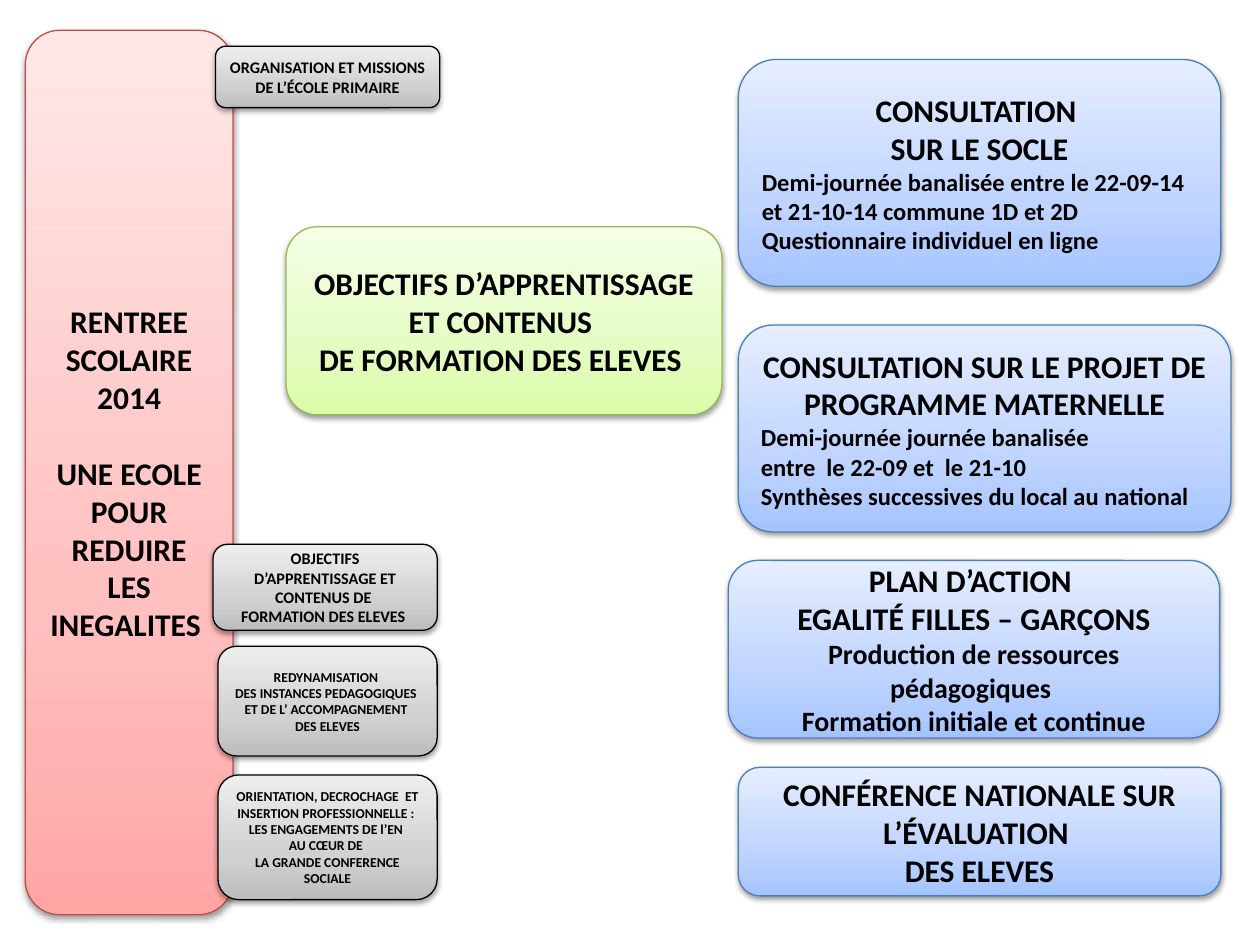
import pptx
import pptx.dml.color
import pptx.enum.shapes
import pptx.enum.text
import pptx.oxml
import pptx.oxml.ns
import pptx.util
import copy

# Theme: each tone holds its line colour, then its shades from bottom to top
theme = {
    "font": "Calibri",
    "ink": "000000",
    "red": ("BF4C48", "FFA6A5", "FFC0BF", "FFE7E7"),
    "grey": ("000000", "BDBDBD", "D1D1D1", "EEEEEE"),
    "green": ("98B955", "DAFDA7", "E4FCC2", "F5FFE7"),
    "blue": ("4B7EBC", "A4C4FF", "BFD4FF", "E6EEFF"),
    "stops": (0, 0.35, 1),
    "head": 18, "sub": 16, "note": 14, "small": 9.2, "tiny": 7.8,
}
shade = (
    f'<a:outerShdw {pptx.oxml.ns.nsdecls("a")} blurRad="40000" dist="20000" '
    'dir="5400000" rotWithShape="0"><a:srgbClr val="000000">'
    '<a:alpha val="38000"/></a:srgbClr></a:outerShdw>'
)
rgb = pptx.dml.color.RGBColor.from_string
align = pptx.enum.text.PP_ALIGN

deck = pptx.Presentation()
deck.slide_width = pptx.util.Inches(10)
deck.slide_height = pptx.util.Inches(7.5)
slide = deck.slides.add_slide(deck.slide_layouts[6])

# Grid of 100 columns by 100 rows
col, row = deck.slide_width / 100, deck.slide_height / 100


def write(frame, text, size="head", side=align.CENTER, gap=0):
    """Add one paragraph, filling the empty first one when there is one."""
    para = frame.paragraphs[0] if not frame.text else frame.add_paragraph()
    para.alignment = side
    para.space_before = pptx.util.Pt(gap)
    run = para.add_run()
    run.text = text
    run.font.name = theme["font"]
    run.font.size = pptx.util.Pt(theme[size])
    run.font.bold = True
    run.font.color.rgb = rgb(theme["ink"])


def panel(tone, x, y, w, h, pad=0.1):
    """Draw a shaded round box on the grid and return its text frame."""
    box = slide.shapes.add_shape(
        pptx.enum.shapes.MSO_SHAPE.ROUNDED_RECTANGLE,
        round(x * col), round(y * row), round(w * col), round(h * row))
    edge, *tints = theme[tone]
    box.line.color.rgb = rgb(edge)
    box.line.width = pptx.util.Pt(0.75)

    # Three-stop shade running upwards
    box.fill.gradient()
    box.fill.gradient_angle = 90
    stops = box._element.spPr.find(".//" + pptx.oxml.ns.qn("a:gsLst"))
    stops.append(copy.deepcopy(stops[-1]))
    for stop, place, tint in zip(box.fill.gradient_stops, theme["stops"], tints):
        stop.position = place
        stop.color.rgb = rgb(tint)

    # Soft drop shadow
    box.shadow.inherit = False
    glow = box._element.spPr.find(pptx.oxml.ns.qn("a:effectLst"))
    glow.append(pptx.oxml.parse_xml(shade))

    frame = box.text_frame
    frame.word_wrap = True
    frame.vertical_anchor = pptx.enum.text.MSO_ANCHOR.MIDDLE
    frame.margin_left = frame.margin_right = pptx.util.Inches(pad)
    return frame


# Red banner on the left
frame = panel("red", 2, 3.2, 16.5, 93.6)
write(frame, "RENTREE SCOLAIRE 2014")
write(frame, "UNE ECOLE POUR REDUIRE LES INEGALITES ", gap=22)

# Grey tabs over the banner's edge
tabs = [
    ((17.1, 4.9, 17.8, 6.5), "small",
     ["ORGANISATION ET MISSIONS DE L’ÉCOLE PRIMAIRE"]),
    ((16.9, 57.6, 17.8, 9.1), "small",
     ["OBJECTIFS D’APPRENTISSAGE ET CONTENUS DE ", "FORMATION DES ELEVES "]),
    ((17.3, 68.4, 17.4, 11.6), "tiny",
     ["REDYNAMISATION ", "DES INSTANCES PEDAGOGIQUES ",
      "ET DE L’ ACCOMPAGNEMENT ", "DES ELEVES"]),
    ((17.3, 82, 17.4, 13.2), "tiny",
     ["ORIENTATION, DECROCHAGE  ET INSERTION PROFESSIONNELLE : ",
      "LES ENGAGEMENTS DE l’EN ", "AU CŒUR DE ",
      "LA GRANDE CONFERENCE SOCIALE"]),
]
for spot, size, lines in tabs:
    frame = panel("grey", *spot, pad=0.09)
    for line in lines:
        write(frame, line, size=size)

# Green theme box in the middle
frame = panel("green", 22.7, 24, 34.6, 19.9)
for line in ("OBJECTIFS D’APPRENTISSAGE ET CONTENUS ", "DE FORMATION DES ELEVES "):
    write(frame, line)

# Blue action cards on the right: headings, then details
cards = [
    ((58.6, 6.3, 38.3, 24), ["CONSULTATION ", "SUR LE SOCLE"],
     "note", align.LEFT,
     ["Demi-journée banalisée entre le 22-09-14 et 21-10-14 commune 1D et 2D",
      "Questionnaire individuel en ligne"]),
    ((58.6, 34.4, 39.1, 21.9),
     ["CONSULTATION SUR LE PROJET DE PROGRAMME MATERNELLE"],
     "note", align.LEFT,
     ["Demi-journée journée banalisée", "entre  le 22-09 et  le 21-10",
      "Synthèses successives du local au national"]),
    ((57.8, 59.3, 39, 18.8), ["PLAN D’ACTION ", "EGALITÉ FILLES – GARÇONS"],
     "sub", align.CENTER,
     ["Production de ressources pédagogiques ",
      "Formation initiale et continue"]),
    ((58.6, 81.2, 38.3, 13.6),
     ["CONFÉRENCE NATIONALE SUR L’ÉVALUATION ", "DES ELEVES"],
     "sub", align.CENTER, []),
]
for spot, heads, size, side, notes in cards:
    frame = panel("blue", *spot)
    for line in heads:
        write(frame, line)
    for line in notes:
        write(frame, line, size=size, side=side)

deck.save("out.pptx")
